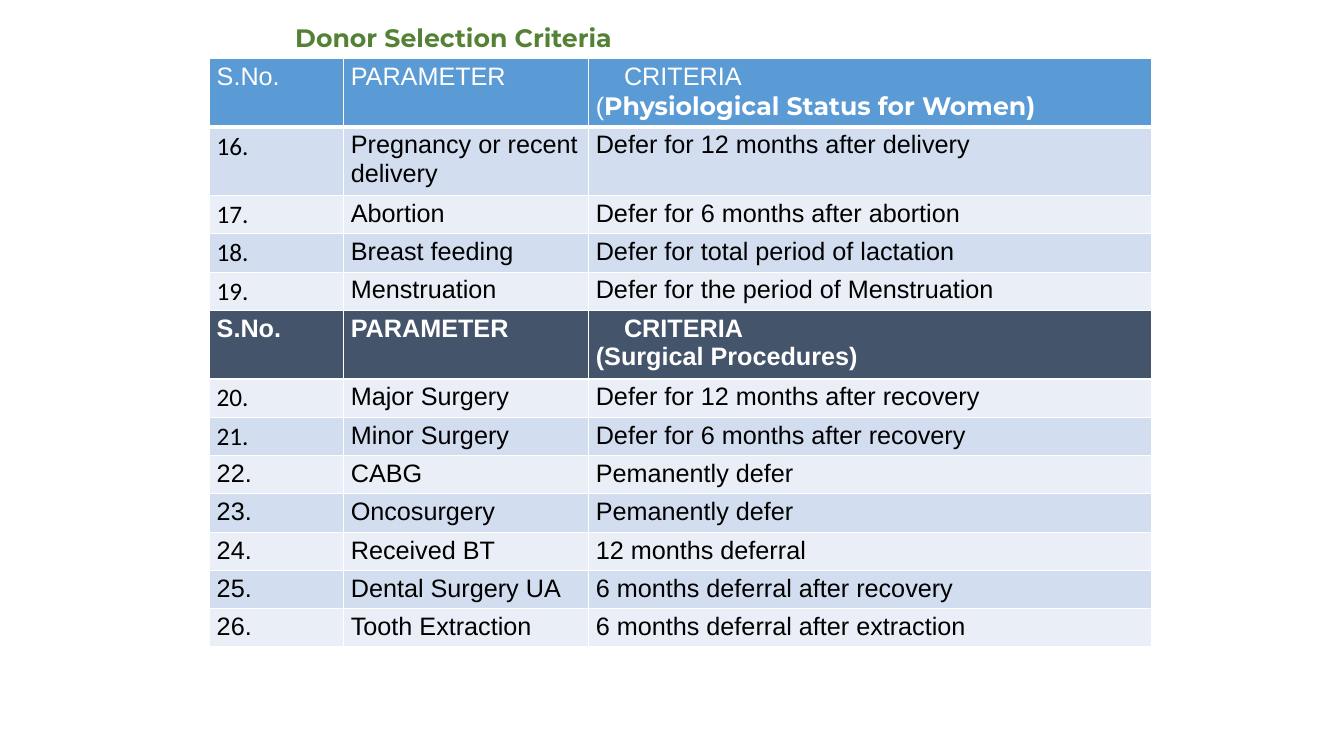
from lxml import etree
from pptx import Presentation
from pptx import util as u
from pptx.dml.color import RGBColor
from pptx.oxml.ns import qn


def color(value):
    return RGBColor.from_string(value)


def add_border(cell, side, width):
    line = etree.SubElement(cell._tc.get_or_add_tcPr(), qn(f"a:{side}"), w=str(u.Pt(width)))
    fill = etree.SubElement(line, qn("a:solidFill"))
    etree.SubElement(fill, qn("a:srgbClr"), val="FFFFFF")


presentation = Presentation()
presentation.slide_width = u.Inches(13.33)
presentation.slide_height = u.Inches(7.5)
slide = presentation.slides.add_slide(presentation.slide_layouts[6])

title = slide.shapes.add_textbox(u.Inches(2.83), u.Inches(0.17), u.Inches(6), u.Inches(0.4))
title.text_frame.word_wrap = True
paragraph = title.text_frame.paragraphs[0]
paragraph.text = "Donor Selection Criteria"
paragraph.font.name = "Montserrat"
paragraph.font.size = u.Pt(18)
paragraph.font.bold = True
paragraph.font.color.rgb = color("548235")

criteria = [
    ("S.No.", "PARAMETER", "CRITERIA\n(Physiological Status for Women)"),
    ("16.", "Pregnancy or recent delivery", "Defer for 12 months after delivery"),
    ("17.", "Abortion", "Defer for 6 months after abortion"),
    ("18.", "Breast feeding", "Defer for total period of lactation"),
    ("19.", "Menstruation", "Defer for the period of Menstruation"),
    ("S.No.", "PARAMETER", "CRITERIA\n(Surgical Procedures)"),
    ("20.", "Major Surgery", "Defer for 12 months after recovery"),
    ("21.", "Minor Surgery", "Defer for 6 months after recovery"),
    ("22.", "CABG", "Pemanently defer"),
    ("23.", "Oncosurgery", "Pemanently defer"),
    ("24.", "Received BT", "12 months deferral"),
    ("25.", "Dental Surgery UA", "6 months deferral after recovery"),
    ("26.", "Tooth Extraction", "6 months deferral after extraction"),
]
header_fills = {0: "5B9BD5", 5: "44546A"}
band_fills = ["EAEFF7", "D2DEEF"]
two_line_rows = (0, 1, 5)
calibri_numbers = ("16.", "17.", "18.", "19.", "20.", "21.")

table = slide.shapes.add_table(
    len(criteria), 3, u.Inches(2.08), u.Inches(0.58), u.Inches(9.33), u.Inches(5.78)
).table
for column, width in zip(table.columns, (1.33, 2.43, 5.58)):
    column.width = u.Inches(width)

for row_index, values in enumerate(criteria):
    is_header = row_index in header_fills
    table.rows[row_index].height = u.Inches(27 / 40 if row_index in two_line_rows else 3 / 8)
    for column_index, value in enumerate(values):
        cell = table.cell(row_index, column_index)
        cell.margin_left = cell.margin_right = u.Inches(0.07)
        cell.margin_top = cell.margin_bottom = u.Inches(0.04)
        for side in ("lnL", "lnR", "lnT", "lnB"):
            add_border(cell, side, 3 if row_index == 0 and side == "lnB" else 1)
        cell.fill.solid()
        cell.fill.fore_color.rgb = color(header_fills.get(row_index, band_fills[row_index % 2]))
        cell.text = value
        for paragraph in cell.text_frame.paragraphs:
            paragraph.font.name = "Calibri" if value in calibri_numbers else "Arial"
            paragraph.font.size = u.Pt(18)
            paragraph.font.bold = row_index == 5
            paragraph.font.color.rgb = color("FFFFFF" if is_header else "000000")
        if is_header and column_index == 2:
            cell.text_frame.paragraphs[0]._p.get_or_add_pPr().set("marL", str(u.Inches(0.28)))

status = table.cell(0, 2).text_frame.paragraphs[1]
status.runs[0].text = "("
emphasis = status.add_run()
emphasis.text = "Physiological Status for Women)"
emphasis.font.name = "Montserrat"
emphasis.font.size = u.Pt(18)
emphasis.font.bold = True
emphasis.font.color.rgb = color("FFFFFF")

presentation.save("out.pptx")
